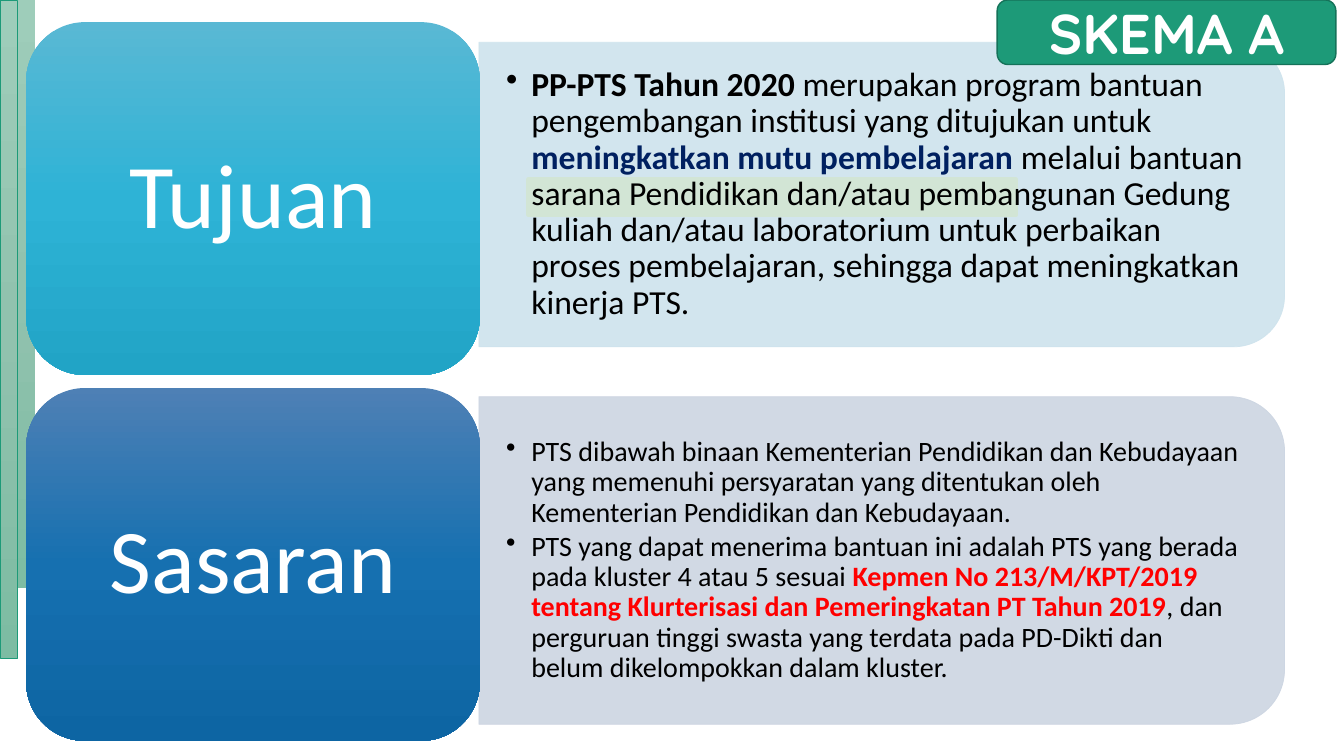
"""Build the SKEMA A slide with its goal and target panels."""
from copy import deepcopy
from lxml.etree import SubElement
from pptx import Presentation
from pptx.dml.color import RGBColor
from pptx.enum.shapes import MSO_SHAPE
from pptx.enum.text import MSO_ANCHOR, PP_ALIGN
from pptx.oxml.ns import qn
from pptx.util import Inches, Pt

BLACK, WHITE, NAVY, RED = "000000", "FFFFFF", "002060", "FF0000"
GREENS = ("9ECDBA", "91C2AE", "7DBCA3")
BARS = [(0.18, 0.17, 5.83, None), (0, 0.17, 6.53, "1D9A78")]
ROWS = [
    dict(
        title="Tujuan", top=0.22, tones=("59B8D4", "2EB3D6", "21A4C6"),
        tint="CEE3ED", tall=3.02, size=24, body=(7.85, 2.73),
        items=[[
            ("PP-PTS Tahun 2020 ", BLACK, True),
            ("merupakan program bantuan pengembangan institusi yang "
             "ditujukan untuk ", BLACK, False),
            ("meningkatkan mutu pembelajaran ", NAVY, True),
            ("melalui bantuan sarana Pendidikan dan/atau pembangunan Gedung "
             "kuliah dan/atau laboratorium untuk perbaikan proses "
             "pembelajaran, sehingga dapat meningkatkan kinerja PTS.",
             BLACK, False),
        ]],
    ),
    dict(
        title="Sasaran", top=3.85, tones=("4E80B5", "1670B0", "0D65A3"),
        tint="CCD5E2", tall=3.25, size=20, body=(7.83, 2.93),
        items=[
            [("PTS dibawah binaan Kementerian Pendidikan dan Kebudayaan yang "
              "memenuhi persyaratan yang ditentukan oleh Kementerian "
              "Pendidikan dan Kebudayaan.", BLACK, False)],
            [("PTS yang dapat menerima bantuan ini adalah PTS yang berada "
              "pada kluster 4 atau 5 sesuai ", BLACK, False),
             ("Kepmen No 213/M/KPT/2019 tentang Klurterisasi dan "
              "Pemeringkatan PT Tahun 2019", RED, True),
             (", dan perguruan tinggi swasta yang terdata pada PD-Dikti dan "
              "belum dikelompokkan dalam kluster.", BLACK, False)],
        ],
    ),
]
LEFT, WIDE, HIGH = 0.26, 4.5, 3.5
EDGE, LONG, INSET = 4.75, 7.99, 0.17


def tone(color):
    return RGBColor.from_string(color)


def draw(slide, kind, box, fill, line=None, width=1):
    shape = slide.shapes.add_shape(kind, *map(Inches, box))
    shape.shadow.inherit = False
    if isinstance(fill, tuple):
        shape.fill.gradient()
        shape.fill.gradient_angle = 270
        stops = shape._element.spPr.find(qn("a:gradFill")).find(qn("a:gsLst"))
        stops.append(deepcopy(stops[0]))
        for stop, color, spot in zip(shape.fill.gradient_stops, fill, (0, 0.5, 1)):
            stop.color.rgb = tone(color)
            stop.position = spot
    else:
        shape.fill.solid()
        shape.fill.fore_color.rgb = tone(fill)
    if line:
        shape.line.color.rgb = tone(line)
        shape.line.width = Pt(width)
    else:
        shape.line.fill.background()
    return shape


def fade(shape):
    for color in shape._element.spPr.iter(qn("a:srgbClr")):
        SubElement(color, qn("a:alpha")).set("val", "90000")


def write(para, text, size, color, bold=False, face="Calibri"):
    run = para.add_run()
    run.text = text
    font = run.font
    font.name, font.size, font.bold = face, Pt(size), bold
    font.color.rgb = tone(color)


def frame(slide, box):
    text = slide.shapes.add_textbox(*map(Inches, box)).text_frame
    text.word_wrap = True
    text.vertical_anchor = MSO_ANCHOR.MIDDLE
    text.margin_left = text.margin_right = Inches(0.27)
    text.margin_top = text.margin_bottom = Inches(0.14)
    return text


def bullet(para):
    props = para._p.get_or_add_pPr()
    props.set("marL", str(Inches(0.25)))
    props.set("indent", str(-Inches(0.25)))
    SubElement(props, qn("a:buChar")).set("char", "•")


def add_row(slide, row):
    top, tall, size = row["top"], row["tall"], row["size"]
    mid = top + HIGH / 2
    panel = draw(slide, MSO_SHAPE.ROUND_2_SAME_RECTANGLE,
                 (EDGE + (LONG - tall) / 2, mid - 0.04 - LONG / 2, tall, LONG),
                 row["tint"], row["tint"], 0.5)
    panel.rotation = 90
    fade(panel)
    wide, high = row["body"]
    body = frame(slide, (EDGE, mid - 0.04 - high / 2, wide, high))
    for i, item in enumerate(row["items"]):
        para = body.add_paragraph() if i else body.paragraphs[0]
        bullet(para)
        para.level = 1
        para.line_spacing = 0.9
        para.space_after = Pt(size * 0.15)
        for text, color, bold in item:
            write(para, text, size, color, bold)
    draw(slide, MSO_SHAPE.ROUNDED_RECTANGLE, (LEFT, top, WIDE, HIGH), row["tones"])
    para = frame(slide, (LEFT + INSET, top + INSET, WIDE - 2 * INSET,
                         HIGH - 2 * INSET)).paragraphs[0]
    para.alignment = PP_ALIGN.CENTER
    para.line_spacing = 0.9
    write(para, row["title"], 65, WHITE)


def main():
    deck = Presentation()
    deck.slide_width, deck.slide_height = Inches(13.33), Inches(7.5)
    slide = deck.slides.add_slide(deck.slide_layouts[6])
    for left, wide, high, line in BARS:
        draw(slide, MSO_SHAPE.RECTANGLE, (left, 0, wide, high), GREENS, line, 0.5)
    draw(slide, MSO_SHAPE.RECTANGLE, (5.24, 1.78, 4.84, 0.35), "FFFF00", "FFFF00", 3)
    for row in ROWS:
        add_row(slide, row)
    badge = draw(slide, MSO_SHAPE.ROUNDED_RECTANGLE, (9.89, 0, 3.36, 0.64),
                 "1D9A78", "157259")
    badge.text_frame.vertical_anchor = MSO_ANCHOR.MIDDLE
    para = badge.text_frame.paragraphs[0]
    para.alignment = PP_ALIGN.CENTER
    write(para, "SKEMA A", 40, WHITE, True, "Quicksand")
    deck.save("out.pptx")


if __name__ == "__main__":
    main()
